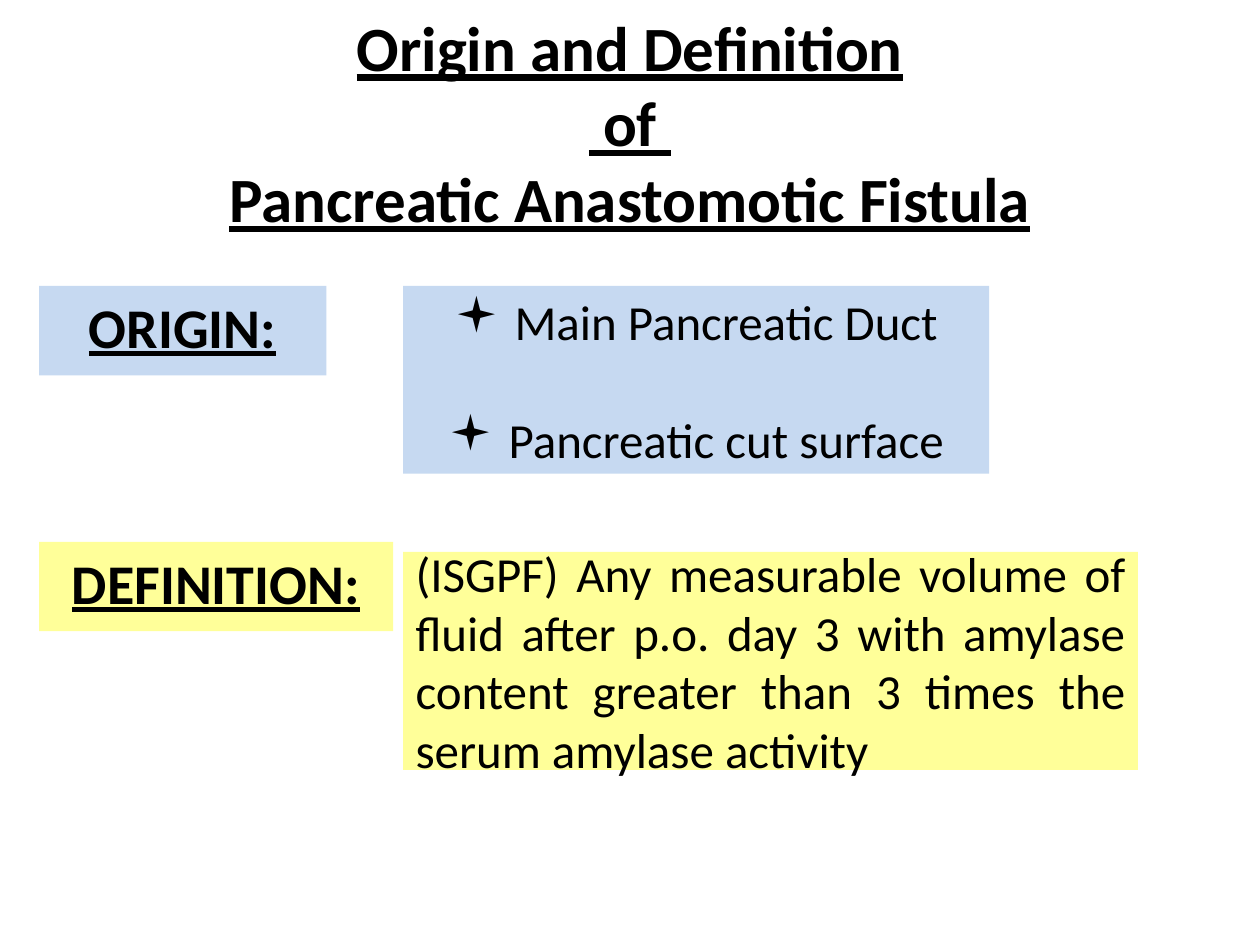
from dataclasses import dataclass

import pptx
import pptx.dml.color
import pptx.enum.shapes
import pptx.enum.text
import pptx.oxml
import pptx.oxml.ns
import pptx.slide
import pptx.text.text
import pptx.util

ALIGN = pptx.enum.text.PP_ALIGN
ANCHOR = pptx.enum.text.MSO_ANCHOR
COLOURS = {"text": "000000", "origin": "C6D9F1", "definition": "FFFF99"}
HEADING = {"bold": True, "underline": True}
LEFT_COLUMN, RIGHT_COLUMN = 22.3, 230.4
ORIGIN_TOP = 163.4
LABEL_HEIGHT = 51.1


@dataclass(frozen=True)
class Panel:
    paragraphs: tuple[str, ...]
    left: float
    top: float
    width: float
    height: float
    size: float
    fill: str | None = None
    heading: bool = False
    bulleted: bool = False
    alignment: ALIGN = ALIGN.CENTER
    anchor: ANCHOR = ANCHOR.MIDDLE
    gap: float = 0


PANELS = (
    Panel(("Origin and Definition\v of \vPancreatic Anastomotic Fistula",),
          0, 28.1, 720, 82.8, 36, heading=True),
    Panel(("ORIGIN:",), LEFT_COLUMN, ORIGIN_TOP, 164.2, LABEL_HEIGHT, 32,
          "origin", heading=True, anchor=ANCHOR.TOP),
    Panel(("DEFINITION:",), LEFT_COLUMN, 309.6, 202.3, LABEL_HEIGHT, 32,
          "definition", heading=True, anchor=ANCHOR.TOP),
    Panel((" Main Pancreatic Duct", " Pancreatic cut surface"),
          RIGHT_COLUMN, ORIGIN_TOP, 334.8, 107.3, 28, "origin",
          bulleted=True, gap=34),
    Panel(("(ISGPF) Any measurable volume of fluid after p.o. day 3 with amylase "
           "content greater than 3 times the serum amylase activity",),
          RIGHT_COLUMN, 315.4, 419.8, 124.6, 28, "definition",
          alignment=ALIGN.JUSTIFY),
)


def colour(name: str) -> pptx.dml.color.RGBColor:
    return pptx.dml.color.RGBColor.from_string(COLOURS[name])


def apply_format(target: object, values: dict[str, object]) -> None:
    for name, value in values.items():
        setattr(target, name, value)


def add_bullet(paragraph: pptx.text.text._Paragraph) -> None:
    properties = paragraph._p.get_or_add_pPr()
    properties.set("marL", "0")
    properties.set("indent", "0")
    for tag, attribute, value in (("buFont", "typeface", "Wingdings"),
                                  ("buChar", "char", "▪")):
        element = pptx.oxml.parse_xml(
            f'<a:{tag} {pptx.oxml.ns.nsdecls("a")} {attribute}="{value}"/>')
        properties.append(element)


def add_panel(slide: pptx.slide.Slide, panel: Panel) -> None:
    bounds = [pptx.util.Pt(value) for value in
              (panel.left, panel.top, panel.width, panel.height)]
    if panel.fill:
        shape = slide.shapes.add_shape(
            pptx.enum.shapes.MSO_SHAPE.RECTANGLE, *bounds)
        shape.shadow.inherit = False
        shape.fill.solid()
        shape.fill.fore_color.rgb = colour(panel.fill)
        shape.line.fill.background()
    else:
        shape = slide.shapes.add_textbox(*bounds)
    frame = shape.text_frame
    apply_format(frame, {"word_wrap": True, "vertical_anchor": panel.anchor})
    font_format = {"name": "Calibri", "size": pptx.util.Pt(panel.size),
                   **(HEADING if panel.heading else {})}
    for index, text in enumerate(panel.paragraphs):
        paragraph = frame.add_paragraph() if index else frame.paragraphs[0]
        apply_format(paragraph, {
            "text": text, "alignment": panel.alignment,
            "space_before": pptx.util.Pt(panel.gap if index else 0)})
        for run in paragraph.runs:
            apply_format(run.font, font_format)
            run.font.color.rgb = colour("text")
        if panel.bulleted:
            add_bullet(paragraph)


def main() -> None:
    presentation = pptx.Presentation()
    apply_format(presentation, {"slide_width": pptx.util.Pt(720),
                                "slide_height": pptx.util.Pt(540)})
    slide = presentation.slides.add_slide(presentation.slide_layouts[6])
    for panel in PANELS:
        add_panel(slide, panel)
    presentation.save("out.pptx")


if __name__ == "__main__":
    main()
